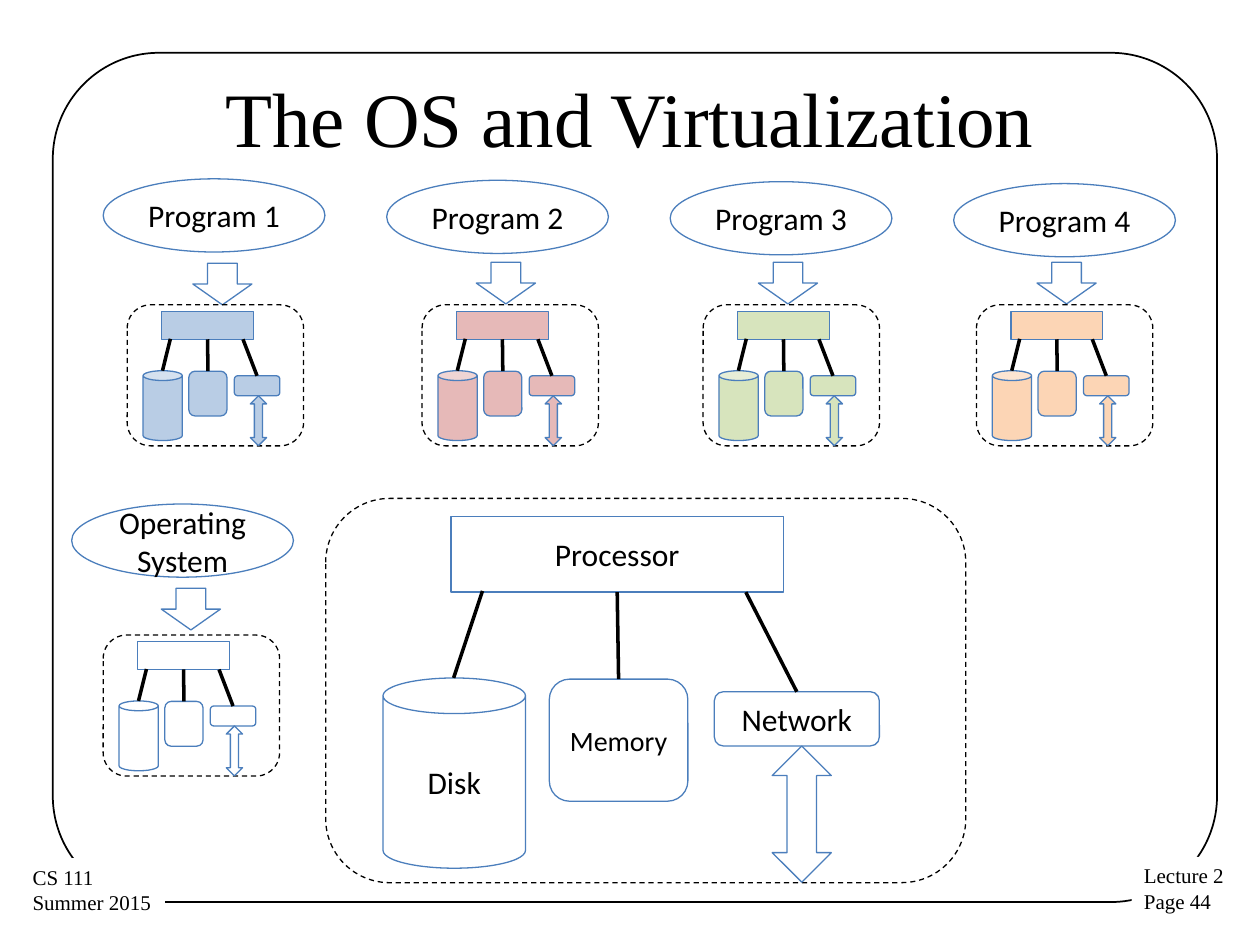
from lxml import etree
from pptx import Presentation
from pptx.dml.color import RGBColor
from pptx.enum.dml import MSO_LINE
from pptx.enum.shapes import MSO_CONNECTOR, MSO_SHAPE
from pptx.enum.text import MSO_ANCHOR, PP_ALIGN
from pptx.oxml.ns import qn
from pptx.util import Pt

BLACK = RGBColor(0x00, 0x00, 0x00)
WHITE = RGBColor(0xFF, 0xFF, 0xFF)
BLUE = RGBColor(0x4B, 0x7E, 0xBC)
SKY = RGBColor(0xB9, 0xCD, 0xE5)
ROSE = RGBColor(0xE6, 0xB9, 0xB8)
LIME = RGBColor(0xD7, 0xE4, 0xBD)
PEACH = RGBColor(0xFC, 0xD5, 0xB5)

RECT = MSO_SHAPE.RECTANGLE
ROUND = MSO_SHAPE.ROUNDED_RECTANGLE
OVAL = MSO_SHAPE.OVAL
CAN = MSO_SHAPE.CAN
DOWN = MSO_SHAPE.DOWN_ARROW
UPDOWN = MSO_SHAPE.UP_DOWN_ARROW
STRAIGHT = MSO_CONNECTOR.STRAIGHT
DASH = MSO_LINE.DASH
MIDDLE, TOP = MSO_ANCHOR.MIDDLE, MSO_ANCHOR.TOP
CENTER, LEFT = PP_ALIGN.CENTER, PP_ALIGN.LEFT
SANS, SERIF = "Calibri", "Times New Roman"

BIG = (365.8, 219.6)
SMALL = (100.8, 80.6)
PARTS = {
    "Processor": (RECT, 71.6, 10.4, 190, 43.2, 18),
    "Memory": (ROUND, 127.8, 103.3, 79.2, 69.8, 16),
    "Disk": (CAN, 32.8, 102.6, 81.4, 108.7, 18),
    "Network": (ROUND, 222.1, 110.5, 94.3, 31, 18),
    "": (UPDOWN, 255.2, 141.5, 33.8, 77.8, 18),
}
WIRES = [
    (89.6, 52.9, 73.1, 102.6, None, None),
    (166.7, 53.6, 167.4, 103.3, "Processor", "Memory"),
    (240.1, 53.6, 268.9, 110.5, None, "Network"),
]
PROGRAMS = [
    ("Program 1", 59, 102.2, 110.2, 150.4, 72.7, 174.2, SKY),
    ("Program 2", 221, 103, 272.2, 149.9, 241.2, 174.2, ROSE),
    ("Program 3", 383, 103.8, 433.4, 149.9, 401.8, 174.2, LIME),
    ("Program 4", 545, 104.9, 592.6, 149.9, 558, 174.2, PEACH),
    ("Operating System", 41, 288, 92.2, 336.2, 59, 362.9, None),
]


def write(shape, text, size, font=SANS, align=CENTER, anchor=MIDDLE, wrap=True):
    """Fill a shape with text, one paragraph to each line."""
    frame = shape.text_frame
    frame.text = text
    frame.word_wrap = wrap
    frame.vertical_anchor = anchor
    for para in frame.paragraphs:
        para.alignment = align
        for run in para.runs:
            run.font.size = Pt(size)
            run.font.name = font
            run.font.color.rgb = BLACK


def draw(shapes, kind, box, fill=None, line=BLUE, width=0.75):
    """Add a preset shape with a plain fill and outline."""
    shape = shapes.add_shape(kind, *map(Pt, box))
    shape.shadow.inherit = False
    if fill is None:
        shape.fill.background()
    else:
        shape.fill.solid()
        shape.fill.fore_color.rgb = fill
    if line is None:
        shape.line.fill.background()
    else:
        shape.line.color.rgb = line
        shape.line.width = Pt(width)
    return shape


def wire(shapes, ends, start=None, stop=None):
    """Add a thick black wire, joined to the shapes given."""
    link = shapes.add_connector(STRAIGHT, *map(Pt, ends))
    link.line.color.rgb = BLACK
    link.line.width = Pt(2)
    etree.SubElement(link._element.spPr, qn("a:effectLst"))
    if start is not None:
        link.begin_connect(start, 2)
    if stop is not None:
        link.end_connect(stop, 0)


def machine(slide, left, top, size, fill, named=False):
    """Add a grouped machine, its parts scaled to the frame size."""
    shapes = slide.shapes.add_group_shape().shapes
    wide, high = size[0] / BIG[0], size[1] / BIG[1]
    frame = draw(shapes, ROUND, (left, top, *size), line=BLACK)
    frame.line.dash_style = DASH
    made = {}
    for name, (kind, x, y, w, h, points) in PARTS.items():
        box = (left + x * wide, top + y * high, w * wide, h * high)
        made[name] = draw(shapes, kind, box, fill)
        if named and name:
            write(made[name], name, points)
    for x1, y1, x2, y2, start, stop in WIRES:
        ends = (left + x1 * wide, top + y1 * high,
                left + x2 * wide, top + y2 * high)
        wire(shapes, ends, made.get(start), made.get(stop))


def program(slide, name, x, y, arrow_x, arrow_y, left, top, fill):
    """Add a program, its arrow and its virtual machine."""
    oval = draw(slide.shapes, OVAL, (x, y, 126.7, 41.8))
    write(oval, name, 18)
    draw(slide.shapes, DOWN, (arrow_x, arrow_y, 33.8, 23.8), WHITE)
    machine(slide, left, top, SMALL, fill)


def corner(slide, text, box):
    """Add a white footer label that covers the border."""
    label = draw(slide.shapes, RECT, box, WHITE, None)
    write(label, text, 12, SERIF, LEFT, TOP, False)


def main():
    """Build the slide and save it."""
    deck = Presentation()
    deck.slide_width, deck.slide_height = Pt(720), Pt(540)
    slide = deck.slides.add_slide(deck.slide_layouts[6])
    border = draw(slide.shapes, ROUND, (30.2, 30.2, 665.3, 485.3),
                  line=BLACK, width=1)
    border.adjustments[0] = 0.125
    corner(slide, "Lecture 2\nPage 44", (646.6, 489.6, 60.5, 36.7))
    corner(slide, "CS 111\nSummer 2015", (11.5, 490.3, 82.8, 36.7))
    title = slide.shapes.add_textbox(Pt(36), Pt(21.6), Pt(648), Pt(90))
    write(title, "The OS and Virtualization", 44, SERIF)
    machine(slide, 186.1, 284.8, BIG, WHITE, True)
    for item in PROGRAMS:
        program(slide, *item)
    deck.save("out.pptx")


if __name__ == "__main__":
    main()
